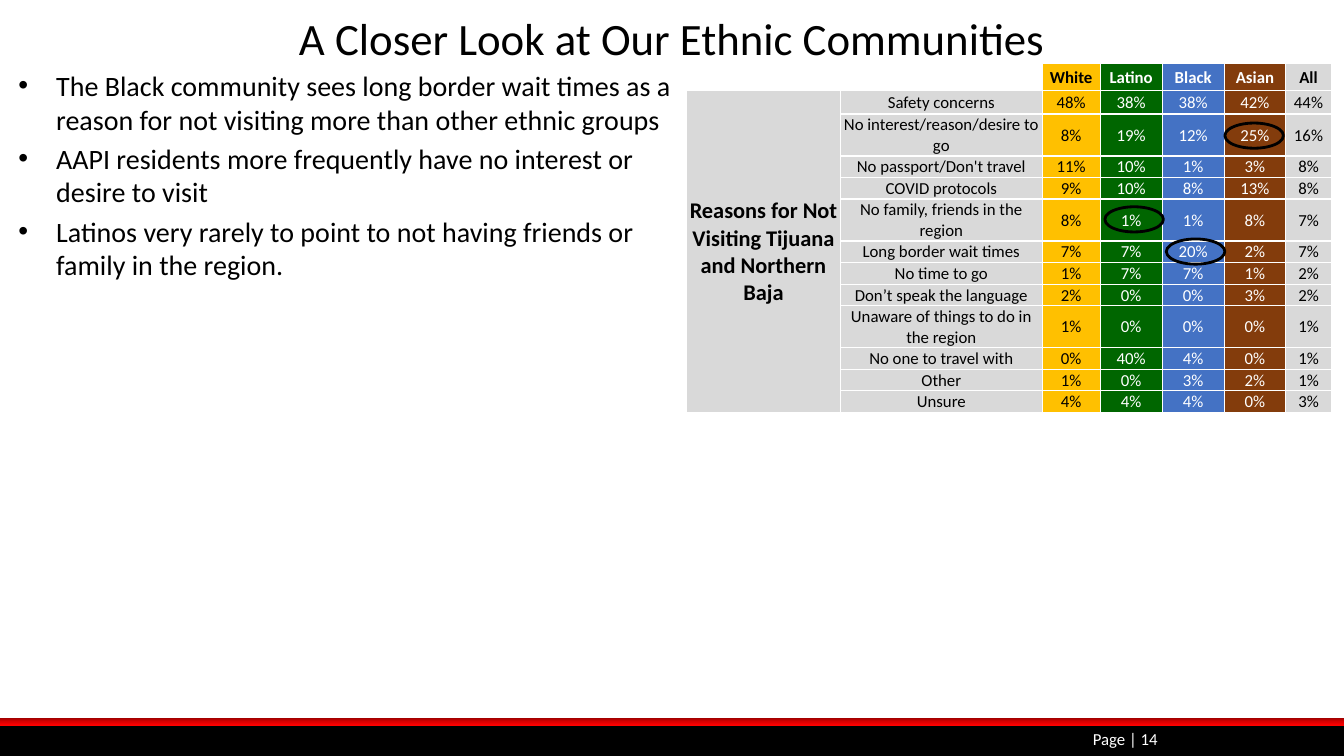
"""Builds the slide on why ethnic communities do not visit Tijuana and Northern Baja."""
from copy import deepcopy

from pptx import Presentation
from pptx.dml.color import RGBColor
from pptx.enum.shapes import MSO_SHAPE as Shape
from pptx.enum.text import MSO_ANCHOR as Anchor, PP_ALIGN as Align
from pptx.oxml.ns import qn
from pptx.oxml.xmlchemy import OxmlElement as new_element
from pptx.util import Pt

FONT = "Calibri"
BLACK = RGBColor(0, 0, 0)
WHITE = RGBColor(255, 255, 255)
GOLD = RGBColor(0xFF, 0xC0, 0x00)
GREEN = RGBColor(0x00, 0x66, 0x00)
BLUE = RGBColor(0x44, 0x72, 0xC4)
BROWN = RGBColor(0x83, 0x3C, 0x0C)
GREY = RGBColor(0xD9, 0xD9, 0xD9)
STRIPE_STOPS = (
    (0, RGBColor(0x97, 0, 0)),
    (0.5, RGBColor(0xD7, 0, 0)),
    (1, RGBColor(0xFF, 0, 0)),
)

SLIDE_WIDTH, SLIDE_HEIGHT = 960, 540
BULLETS = (
    "The Black community sees long border wait times as a reason for not visiting "
    "more than other ethnic groups",
    "AAPI residents more frequently have no interest or desire to visit",
    "Latinos very rarely to point to not having friends or family in the region.",
)
GROUPS = (
    ("White", GOLD, BLACK),
    ("Latino", GREEN, WHITE),
    ("Black", BLUE, WHITE),
    ("Asian", BROWN, WHITE),
    ("All", GREY, BLACK),
)
TABLE_HEADING = "Reasons for Not Visiting Tijuana and Northern Baja"
REASONS = (
    ("Safety concerns", 48, 38, 38, 42, 44),
    ("No interest/reason/desire to go", 8, 19, 12, 25, 16),
    ("No passport/Don't travel", 11, 10, 1, 3, 8),
    ("COVID protocols", 9, 10, 8, 13, 8),
    ("No family, friends in the region", 8, 1, 1, 8, 7),
    ("Long border wait times", 7, 7, 20, 2, 7),
    ("No time to go", 1, 7, 7, 1, 2),
    ("Don’t speak the language", 2, 0, 0, 3, 2),
    ("Unaware of things to do in the region", 1, 0, 0, 0, 1),
    ("No one to travel with", 0, 40, 4, 0, 1),
    ("Other", 1, 0, 3, 2, 1),
    ("Unsure", 4, 4, 4, 0, 3),
)
COLUMN_WIDTHS = (110, 144, 41.5, 44.3, 44.3, 44, 32.5)
ONE_LINE, TWO_LINES = 15.4, 30
ROW_HEIGHTS = (19.5, 16.5, TWO_LINES, ONE_LINE, ONE_LINE, TWO_LINES, ONE_LINE,
               ONE_LINE, ONE_LINE, TWO_LINES, ONE_LINE, ONE_LINE, ONE_LINE)
CIRCLE_OFFSETS = ((342.7, 125.3), (384.5, 42.5), (298.8, 102.3))
CIRCLE_SIZE = (41.8, 18)


def add_text(slide, box, lines, size, color, align, anchor):
    """Add a wrapping text box and return its paragraphs."""
    frame = slide.shapes.add_textbox(*map(Pt, box)).text_frame
    frame.word_wrap = True
    frame.vertical_anchor = anchor
    frame.text = "\n".join(lines)
    for para in frame.paragraphs:
        style_paragraph(para, size, color, align)
    return frame.paragraphs


def style_paragraph(para, size, color, align, bold=False):
    """Set the alignment and font of one paragraph."""
    para.alignment = align
    para.font.name = FONT
    para.font.size = Pt(size)
    para.font.color.rgb = color
    para.font.bold = bold


def add_bar(slide, box):
    """Add a rectangle without outline or shadow."""
    bar = slide.shapes.add_shape(Shape.RECTANGLE, *map(Pt, box))
    bar.shadow.inherit = False
    bar.line.fill.background()
    return bar


def add_footer(slide, box):
    """Add the black band, the red stripe on its top edge and the page number."""
    left, top, width, height = box
    band = add_bar(slide, box)
    band.fill.solid()
    band.fill.fore_color.rgb = BLACK

    stripe = add_bar(slide, (left, top - 5, width, 5.5))
    stripe.fill.gradient()
    stripe.fill.gradient_angle = 270
    first_stop = next(stripe.element.spPr.iter(qn("a:gs")))
    first_stop.addnext(deepcopy(first_stop))
    for stop, (position, color) in zip(stripe.fill.gradient_stops, STRIPE_STOPS):
        stop.position = position
        stop.color.rgb = color

    add_text(slide, (left + 666, top + 0.7, 168, 18), ["Page | 14"], 12, WHITE,
             Align.RIGHT, Anchor.MIDDLE)


def add_bullets(slide, box):
    """Add the bulleted findings."""
    for para in add_text(slide, box, BULLETS, 20, BLACK, Align.LEFT, Anchor.TOP):
        para.space_before = Pt(4)
        properties = para._p.get_or_add_pPr()
        properties.set("marL", str(Pt(27)))
        properties.set("indent", str(Pt(-27)))
        bullet_font = new_element("a:buFont")
        bullet_font.set("typeface", "Arial")
        bullet = new_element("a:buChar")
        bullet.set("char", "•")
        properties.insert_element_before(bullet_font, "a:defRPr")
        properties.insert_element_before(bullet, "a:defRPr")


def set_borders(cell):
    """Draw thin white lines on all four sides of a cell."""
    properties = cell._tc.get_or_add_tcPr()
    for index, side in enumerate(("lnL", "lnR", "lnT", "lnB")):
        line = new_element(f"a:{side}")
        line.set("w", str(Pt(1)))
        fill = new_element("a:solidFill")
        color = new_element("a:srgbClr")
        color.set("val", str(WHITE))
        fill.append(color)
        line.append(fill)
        properties.insert(index, line)


def set_margins(cell):
    """Give a cell its narrow margins."""
    cell.margin_left = cell.margin_right = cell.margin_top = Pt(0.7)
    cell.margin_bottom = 0


def clear_cell(cell):
    """Leave a cell unfilled, with an empty line low enough for its row."""
    set_margins(cell)
    cell.fill.background()
    line_end = new_element("a:endParaRPr")
    line_end.set("sz", "1200")
    cell.text_frame.paragraphs[0]._p.append(line_end)


def fill_cell(cell, text, fill, color, size=12, bold=False):
    """Write centred text on a coloured cell."""
    set_margins(cell)
    cell.vertical_anchor = Anchor.MIDDLE
    cell.fill.solid()
    cell.fill.fore_color.rgb = fill
    cell.text = text
    style_paragraph(cell.text_frame.paragraphs[0], size, color, Align.CENTER, bold)


def add_reasons_table(slide, box):
    """Add the table of reasons by group and circle its notable values."""
    left, top = box[:2]
    table = slide.shapes.add_table(
        len(ROW_HEIGHTS), len(COLUMN_WIDTHS), *map(Pt, box)).table
    for column, width in zip(table.columns, COLUMN_WIDTHS):
        column.width = Pt(width)
    for row, height in zip(table.rows, ROW_HEIGHTS):
        row.height = Pt(height)
    for cell in table.iter_cells():
        set_borders(cell)

    corner, corner_end, heading = table.cell(0, 0), table.cell(0, 1), table.cell(1, 0)
    corner.merge(corner_end)
    clear_cell(corner)
    clear_cell(corner_end)
    heading.merge(table.cell(len(REASONS), 0))
    fill_cell(heading, TABLE_HEADING, GREY, BLACK, 16, True)

    for column, (name, fill, color) in enumerate(GROUPS, 2):
        fill_cell(table.cell(0, column), name, fill, color, bold=True)
    for row, (reason, *shares) in enumerate(REASONS, 1):
        fill_cell(table.cell(row, 1), reason, GREY, BLACK)
        for column, (share, group) in enumerate(zip(shares, GROUPS), 2):
            fill_cell(table.cell(row, column), f"{share}%", *group[1:])

    for across, down in CIRCLE_OFFSETS:
        circle = slide.shapes.add_shape(
            Shape.OVAL, *map(Pt, (left + across, top + down, *CIRCLE_SIZE)))
        circle.shadow.inherit = False
        circle.fill.background()
        circle.line.color.rgb = BLACK
        circle.line.width = Pt(2)


def main():
    """Build the deck and save it."""
    deck = Presentation()
    deck.slide_width, deck.slide_height = Pt(SLIDE_WIDTH), Pt(SLIDE_HEIGHT)
    slide = deck.slides.add_slide(deck.slide_layouts[6])
    add_footer(slide, (0, 517.7, SLIDE_WIDTH, 22.3))
    add_text(slide, (6, 3.6, 948, 46), ["A Closer Look at Our Ethnic Communities"],
             32, BLACK, Align.CENTER, Anchor.MIDDLE)
    add_bullets(slide, (6, 45.4, 481.7, 111))
    add_reasons_table(slide, (490.4, 45.4, sum(COLUMN_WIDTHS), sum(ROW_HEIGHTS)))
    deck.save("out.pptx")


if __name__ == "__main__":
    main()
